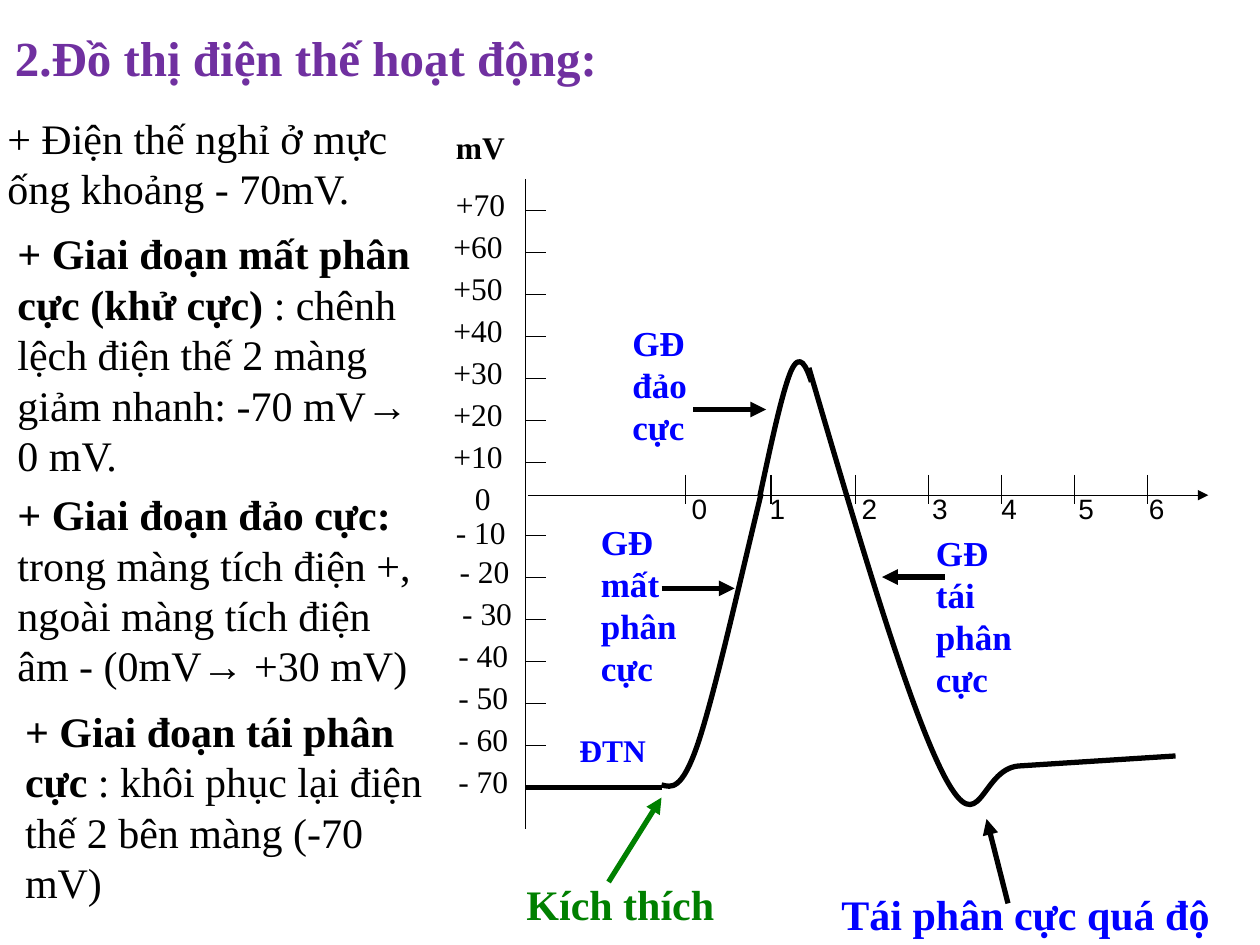
from lxml import etree
from pptx import Presentation
from pptx import util as u
from pptx.dml.color import RGBColor
from pptx.enum import shapes, text
from pptx.oxml import ns

SERIF = "Times New Roman"
BLACK, BLUE, GREEN, PURPLE = "000000", "0000FF", "008000", "7030A0"
STEP = 1 / 3  # height of 10 mV on the vertical axis


def color(value):
    return RGBColor.from_string(value)


def add_text(slide, box, *parts, size=24, font=SERIF, fill=BLACK, bold=False,
             wrap=True, tabs=()):
    """Each part is a string, or a (string, bold) pair."""
    frame = slide.shapes.add_textbox(*map(u.Inches, box)).text_frame
    frame.word_wrap = wrap
    frame.auto_size = text.MSO_AUTO_SIZE.SHAPE_TO_FIT_TEXT
    paragraph = frame.paragraphs[0]
    if tabs:
        tab_list = etree.SubElement(paragraph._p.get_or_add_pPr(), ns.qn("a:tabLst"))
        for position in tabs:
            etree.SubElement(tab_list, ns.qn("a:tab"),
                             pos=str(u.Inches(position)), algn="l")
    for part in parts:
        words, is_bold = part if isinstance(part, tuple) else (part, bold)
        run = paragraph.add_run()
        run.text = words
        run.font.name = font
        run.font.size = u.Pt(size)
        run.font.bold = is_bold
        run.font.color.rgb = color(fill)


def add_line(slide, start, end, width=0.75, fill=BLACK, arrow=False):
    line = slide.shapes.add_connector(shapes.MSO_CONNECTOR.STRAIGHT,
                                      *map(u.Inches, (*start, *end)))
    line.line.width = u.Pt(width)
    line.line.color.rgb = color(fill)
    if arrow:
        etree.SubElement(line.line._get_or_add_ln(), ns.qn("a:tailEnd"), type="triangle")
    etree.SubElement(line._element.spPr, ns.qn("a:effectLst"))


def add_curve(slide, start, *points):
    """Every three points are two controls and an end of a cubic segment."""
    start, *points = [tuple(map(u.Inches, point)) for point in (start, *points)]
    builder = slide.shapes.build_freeform(*start)
    builder.add_line_segments(points, close=False)
    curve = builder.convert_to_shape()
    # Join each three straight steps into one cubic segment
    steps = list(curve._element.iter(ns.qn("a:lnTo")))
    for first in range(0, len(steps), 3):
        cubic = etree.Element(ns.qn("a:cubicBezTo"))
        steps[first].addprevious(cubic)
        for step in steps[first:first + 3]:
            cubic.append(step[0])
            step.getparent().remove(step)
    curve.shadow.inherit = False
    curve.fill.background()
    curve.line.width = u.Pt(3)
    curve.line.color.rgb = color(BLACK)


def add_explanations(slide):
    add_text(slide, (0.02, 0.17, 6.12, 0.57), "2.Đồ thị điện thế hoạt động:",
             size=28, fill=PURPLE, bold=True)
    add_text(slide, (-0.04, 0.84, 3.37, 0.91), "+ Điện thế nghỉ ở mực ống khoảng - 70mV.")
    phases = [
        ((0.04, 1.76, 3.33, 2.12), "+ Giai đoạn mất phân cực (khử cực) ",
         ": chênh lệch điện thế 2 màng giảm nhanh: -70 mV→ 0 mV."),
        ((0.04, 3.83, 3.33, 1.72), "+ Giai đoạn đảo cực: ",
         "trong màng tích điện +, ngoài màng tích điện âm - (0mV→ +30 mV)"),
        ((0.1, 5.55, 3.49, 1.72), "+ Giai đoạn tái phân cực ",
         ": khôi phục lại điện thế 2 bên màng (-70 mV)"),
    ]
    for box, heading, detail in phases:
        add_text(slide, box, (heading, True), (detail, False))


def add_time_axis(slide):
    add_line(slide, (4.19, 3.93), (9.59, 3.93), arrow=True)
    for x in [5.44, 6.12] + [6.79 + 0.58 * i for i in range(5)]:
        add_line(slide, (x, 3.77), (x, 4))
    add_text(slide, (5.27, 3.85, 4.43, 0.37), "".join(f"\t{n}" for n in range(7)),
             size=16, font="Arial", tabs=(0.12, 0.74, 1.47, 2.03, 2.58, 3.19, 3.75))


def add_voltage_axis(slide):
    add_line(slide, (4.17, 1.42), (4.17, 6.58))
    add_text(slide, (3.52, 0.97, 0.8, 0.4), "mV", size=18, bold=True)
    add_text(slide, (3.67, 3.75, 0.33, 0.4), "0", size=18, wrap=False)
    positive_lefts = [3.52] + [3.5] * 6
    negative_lefts = [3.52, 3.55, 3.57] + [3.54] * 4
    for i in range(7):
        scale_marks = [(1.67, positive_lefts[i], 1.42, f"+{70 - 10 * i}"),
                       (4.25, negative_lefts[i], 4.02 if i == 0 else 4, f"- {10 + 10 * i}")]
        for tick, left, top, label in scale_marks:
            y = tick + i * STEP
            add_line(slide, (4.17, y), (4.33, y))
            add_text(slide, (left, top + i * STEP, 0.6, 0.4), label,
                     size=18, wrap=False)


def add_potential(slide):
    # Resting level, rise, peak, then fall with overshoot
    add_curve(slide, (5.25, 6.23),
              (5.33, 6.25), (5.41, 6.28), (5.54, 5.9),
              (5.67, 5.51), (5.85, 4.71), (6.04, 3.92))
    add_line(slide, (4.17, 6.25), (5.25, 6.25), width=3)
    add_curve(slide, (6.03, 3.94),
              (6.12, 3.52), (6.21, 3.1), (6.28, 2.94),
              (6.35, 2.79), (6.4, 2.91), (6.44, 3.03))
    add_curve(slide, (6.42, 2.92),
              (6.82, 4.28), (7.22, 5.64), (7.5, 6.17),
              (7.78, 6.69), (7.78, 6.11), (8.08, 6.08),
              (8.39, 6.06), (8.86, 6.03), (9.33, 6))


def add_phase_labels(slide):
    labels = [
        ((4.5, 5.75, 0.75, 0.4), "ĐTN", 18, BLUE),
        ((4.67, 4.08, 0.83, 1.43), "GĐ mất phân cực", 20, BLUE),
        ((4.92, 2.5, 0.83, 1.1), "GĐ đảo cực", 20, BLUE),
        ((7.33, 4.17, 0.83, 1.43), "GĐ tái phân cực", 20, BLUE),
        ((4.08, 6.92, 1.92, 0.5), "Kích thích", 24, GREEN),
        ((6.58, 7, 3.42, 0.5), "Tái phân cực quá độ", 24, BLUE),
    ]
    for box, label, size, fill in labels:
        add_text(slide, box, label, size=size, fill=fill, bold=True)
    arrows = [
        ((4.83, 7), (5.25, 6.33), GREEN),
        ((5.5, 3.25), (6.08, 3.25), BLACK),
        ((5.25, 4.67), (5.83, 4.67), BLACK),
        ((7.5, 4.58), (7, 4.58), BLACK),
        ((8, 7.17), (7.83, 6.5), BLACK),
    ]
    for start, end, fill in arrows:
        add_line(slide, start, end, width=3, fill=fill, arrow=True)


def main():
    deck = Presentation()
    deck.slide_width, deck.slide_height = u.Inches(10), u.Inches(7.5)
    slide = deck.slides.add_slide(deck.slide_layouts[6])
    add_explanations(slide)
    # Graph
    add_time_axis(slide)
    add_voltage_axis(slide)
    add_potential(slide)
    add_phase_labels(slide)
    deck.save("out.pptx")


if __name__ == "__main__":
    main()
